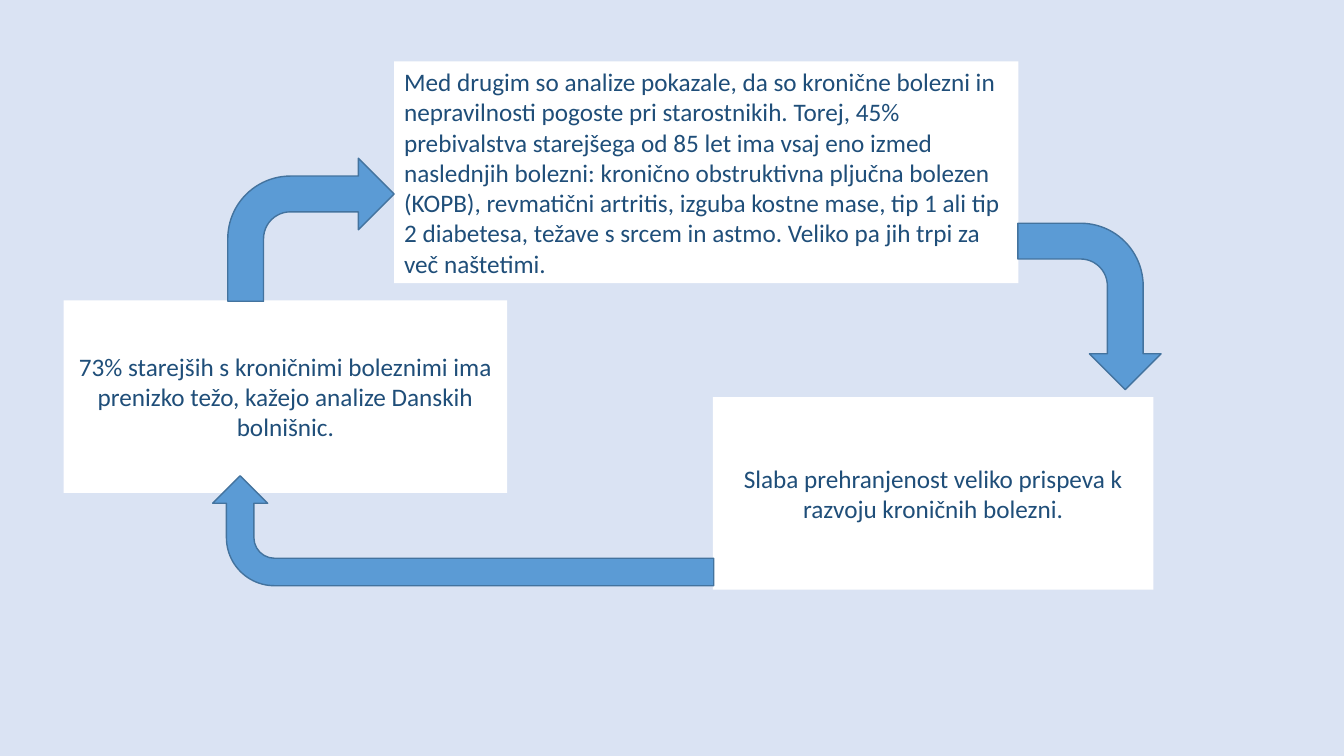
import pptx
import pptx.util
import pptx.dml.color
import pptx.enum.shapes
import pptx.enum.text

KIND = pptx.enum.shapes.MSO_SHAPE
ALIGN = pptx.enum.text.PP_ALIGN
HUES = {"back": "DAE3F3", "box": "FFFFFF", "text": "1F4E79",
        "arrow": "5B9BD5", "edge": "43739E"}

deck = pptx.Presentation()
deck.slide_width = pptx.util.Inches(13.33)
deck.slide_height = pptx.util.Inches(7.5)
slide = deck.slides.add_slide(deck.slide_layouts[6])


def tint(name):
    return pptx.dml.color.RGBColor.from_string(HUES[name])


def place(kind, area, hue):
    """Add a filled shape; area is in percent of the slide's size."""
    left, top, width, height = area
    shape = slide.shapes.add_shape(
        kind,
        int(deck.slide_width * left / 100), int(deck.slide_height * top / 100),
        int(deck.slide_width * width / 100), int(deck.slide_height * height / 100))
    shape.shadow.inherit = False
    shape.fill.solid()
    shape.fill.fore_color.rgb = tint(hue)
    return shape


# Background
slide.background.fill.solid()
slide.background.fill.fore_color.rgb = tint("back")

# Text boxes
boxes = [
    ((4.73, 39.73, 33.01, 25.47), ALIGN.CENTER,
     "73% starejših s kroničnimi boleznimi ima prenizko težo, "
     "kažejo analize Danskih bolnišnic."),
    ((29.33, 8.13, 46.44, 29.33), ALIGN.LEFT,
     "Med drugim so analize pokazale, da so kronične bolezni in "
     "nepravilnosti pogoste pri starostnikih. Torej, 45% prebivalstva "
     "starejšega od 85 let ima vsaj eno izmed naslednjih bolezni: "
     "kronično obstruktivna pljučna bolezen (KOPB), revmatični artritis, "
     "izguba kostne mase, tip 1 ali tip 2 diabetesa, težave s srcem in "
     "astmo. Veliko pa jih trpi za več naštetimi."),
    ((53.04, 52.53, 32.78, 25.47), ALIGN.CENTER,
     "Slaba prehranjenost veliko prispeva k razvoju kroničnih bolezni."),
]
for area, align, words in boxes:
    box = place(KIND.RECTANGLE, area, "box")
    box.line.fill.background()
    frame = box.text_frame
    frame.word_wrap = True
    frame.vertical_anchor = pptx.enum.text.MSO_ANCHOR.MIDDLE
    frame.text = words
    para = frame.paragraphs[0]
    para.alignment = align
    font = para.runs[0].font
    font.name = "Calibri"
    font.size = pptx.util.Pt(18)
    font.color.rgb = tint("text")

# Arrows of the cycle, each with its turn in degrees
arrows = [
    ((74.87, 31.07, 12.38, 18.93), 90),
    ((30.38, 37.07, 8.18, 66.27), 270),
    ((16.95, 20.93, 12.38, 18.93), 0),
]
for area, turn in arrows:
    arrow = place(KIND.BENT_ARROW, area, "arrow")
    arrow.rotation = turn
    arrow.line.color.rgb = tint("edge")
    arrow.line.width = pptx.util.Pt(1)

deck.save("out.pptx")
